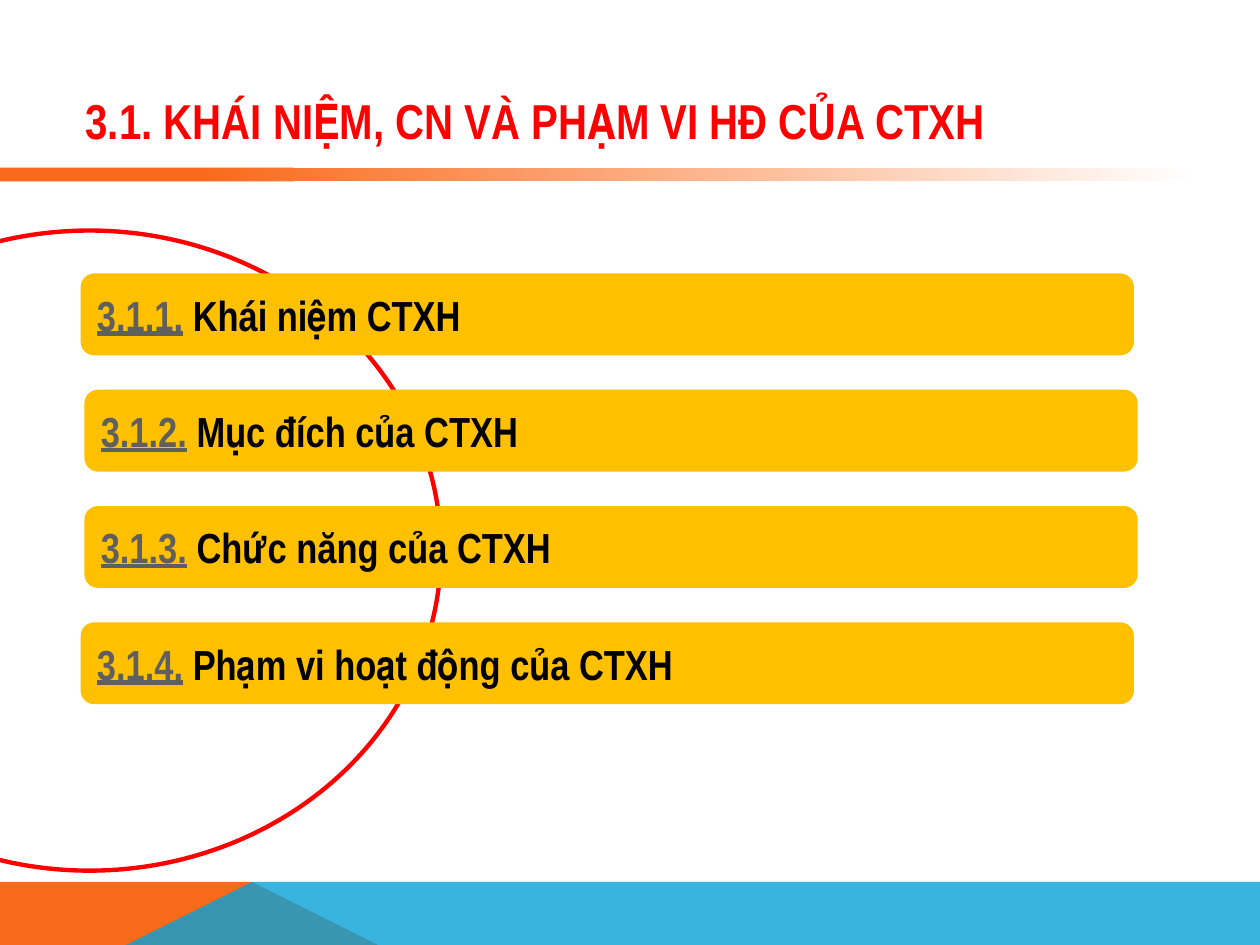
from lxml import etree
from pptx import Presentation
from pptx import util as u
from pptx.dml.color import RGBColor
from pptx.enum import shapes, text
from pptx.oxml.ns import qn

HEADING = "3.1. KHÁI NIỆM, CN VÀ PHẠM VI HĐ CỦA CTXH"
SECTIONS = [
    ("3.1.1.", "Khái niệm CTXH", 0.64),
    ("3.1.2.", "Mục đích của CTXH", 0.67),
    ("3.1.3.", "Chức năng của CTXH", 0.67),
    ("3.1.4.", "Phạm vi hoạt động của CTXH", 0.64),
]
FONT = "Arial Narrow"
WHITE = RGBColor(0xFF, 0xFF, 0xFF)
BLACK = RGBColor(0, 0, 0)
RED = RGBColor(0xFF, 0, 0)
ORANGE = RGBColor(0xF9, 0x6A, 0x1B)
BLUE = RGBColor(0x08, 0xA1, 0xD9)
AMBER = RGBColor(0xFF, 0xC0, 0)
GRAY = RGBColor(0x5F, 0x5F, 0x5F)

WIDTH, HEIGHT = 10, 7.5
BAND_TOP = HEIGHT * 0.9
PEAK = (2.23, BAND_TOP)
RULE_TOP, RULE_HEIGHT = 1.33, 0.11
BAR_TOP, BAR_PITCH, BAR_WIDTH, BAR_HEIGHT = 2.17, 0.923, 8.36, 0.65


def add_preset(slide, kind, left, top, width, height):
    shape = slide.shapes.add_shape(kind, *map(u.Inches, (left, top, width, height)))
    shape.shadow.inherit = False
    shape.line.fill.background()
    return shape


def paint(shape, color):
    shape.fill.solid()
    shape.fill.fore_color.rgb = color


def add_polygon(slide, points, color):
    builder = slide.shapes.build_freeform(*points[0], scale=u.Inches(1))
    builder.add_line_segments(points[1:], close=True)
    polygon = builder.convert_to_shape()
    polygon.shadow.inherit = False
    polygon.line.fill.background()
    paint(polygon, color)
    return polygon


def add_section(slide, row, number, label, left):
    bar = add_preset(slide, shapes.MSO_SHAPE.ROUNDED_RECTANGLE, left,
                     BAR_TOP + row * BAR_PITCH, BAR_WIDTH, BAR_HEIGHT)
    paint(bar, AMBER)
    frame = bar.text_frame
    frame.word_wrap = True
    frame.vertical_anchor = text.MSO_ANCHOR.MIDDLE
    line = frame.paragraphs[0]
    line.alignment = text.PP_ALIGN.LEFT
    line.font.name, line.font.size, line.font.bold = FONT, u.Pt(24), True
    for words, color, underlined in ((number, GRAY, True), (" " + label, BLACK, False)):
        run = line.add_run()
        run.text = words
        run.font.color.rgb = color
        run.font.underline = underlined


def main():
    deck = Presentation()
    deck.slide_width, deck.slide_height = u.Inches(WIDTH), u.Inches(HEIGHT)
    slide = deck.slides.add_slide(deck.slide_layouts[5])

    add_polygon(slide, [(0, HEIGHT), (0, BAND_TOP), PEAK, (3.91, HEIGHT)], ORANGE)
    band = add_polygon(
        slide, [(0, HEIGHT), PEAK, (WIDTH, BAND_TOP), (WIDTH, HEIGHT)], BLUE)
    band_color = band.fill._xPr.find(".//" + qn("a:srgbClr"))
    etree.SubElement(band_color, qn("a:alpha"), val="80000")

    rectangle = shapes.MSO_SHAPE.RECTANGLE
    paint(add_preset(slide, rectangle, 0, RULE_TOP, 2.33, RULE_HEIGHT), ORANGE)
    fade = add_preset(slide, rectangle, 1.58, RULE_TOP, 7.92, RULE_HEIGHT)
    fade.fill.gradient()
    fade.fill.gradient_angle = 0
    for stop, color, position in zip(fade.fill.gradient_stops, (ORANGE, WHITE), (0, 1)):
        stop.color.rgb = color
        stop.position = position

    title = slide.shapes.title
    title.left, title.top, title.width, title.height = map(
        u.Inches, (0.58, 0.65, 8.92, 0.6))
    title.text_frame.text = HEADING
    title.text_frame.vertical_anchor = text.MSO_ANCHOR.MIDDLE
    heading = title.text_frame.paragraphs[0]
    heading.alignment = text.PP_ALIGN.LEFT
    heading.font.name, heading.font.size, heading.font.bold = FONT, u.Pt(28), True
    heading.font.color.rgb = RED

    circle = add_preset(slide, shapes.MSO_SHAPE.OVAL, -2.08, 1.83, 5.58, 5.08)
    circle.fill.background()
    circle.line.color.rgb = RED
    circle.line.width = u.Pt(2.5)

    for row, section in enumerate(SECTIONS):
        add_section(slide, row, *section)

    deck.save("out.pptx")


if __name__ == "__main__":
    main()
